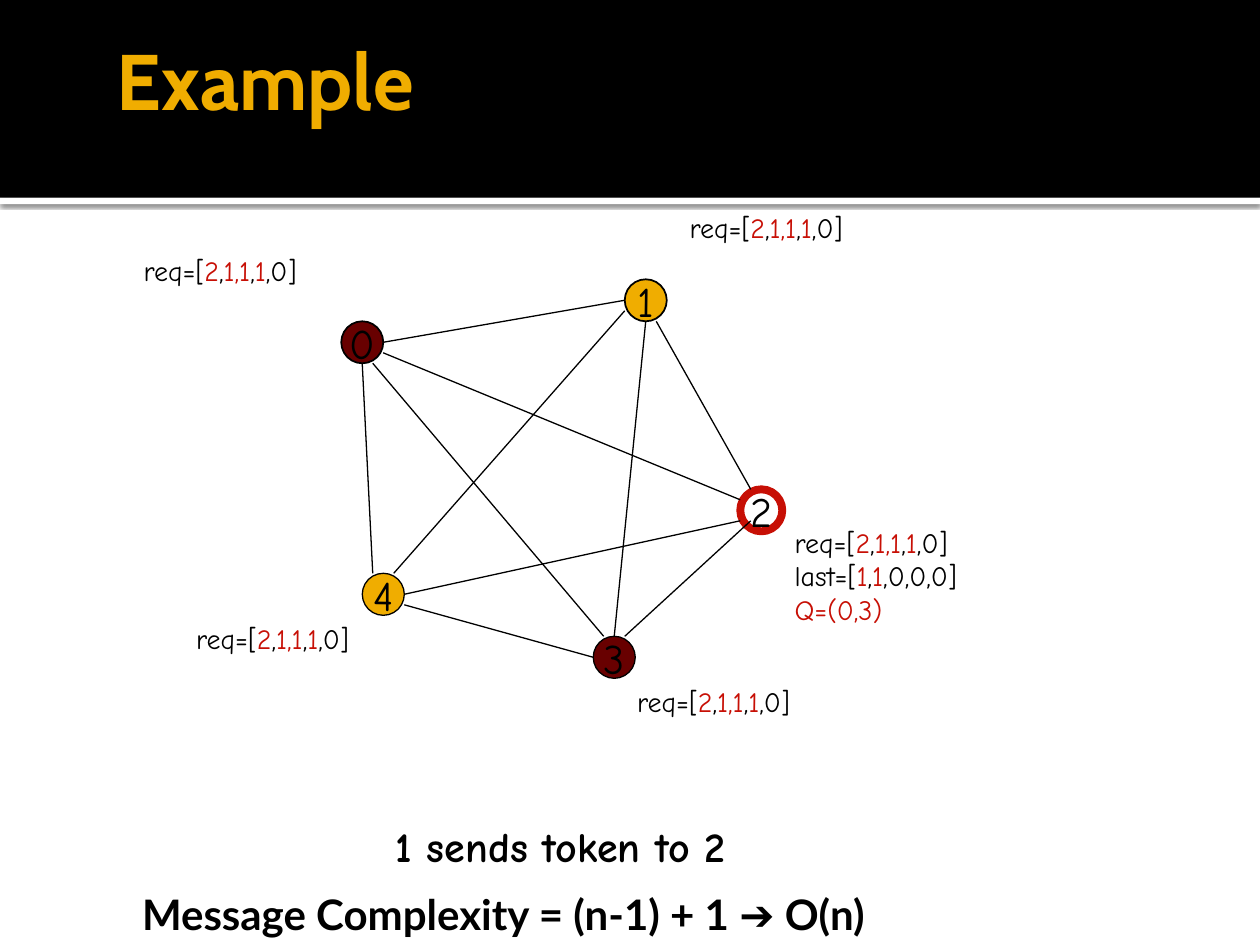
from dataclasses import dataclass
from typing import Optional

from lxml.etree import SubElement
from pptx import Presentation
from pptx.dml.color import RGBColor
from pptx.enum.shapes import MSO_CONNECTOR, MSO_SHAPE
from pptx.enum.text import MSO_ANCHOR, MSO_AUTO_SIZE, PP_ALIGN
from pptx.oxml.ns import qn
from pptx.util import Inches, Pt

BLACK, WHITE, RED, GOLD, MAROON = "000000", "FFFFFF", "C70F05", "F0AD00", "680000"
HAND = "Comic Neue"
CELLS_PER_INCH = 24
GRID_TOP = 0.05
NODE_SIZE = 8  # cells
REQUESTS = "req=[|2|,|1,1|,|1|,0]"  # every second part is red


@dataclass(frozen=True)
class Node:
    name: str
    column: float
    row: float
    fill: Optional[str]
    line: str = BLACK
    weight: float = 0.75


@dataclass(frozen=True)
class Edge:
    """Two nodes, each with a (column, row) port inside its box."""
    start: int
    start_port: tuple[int, int]
    end: int
    end_port: tuple[int, int]


@dataclass(frozen=True)
class Label:
    column: float
    row: float
    lines: tuple[str, ...] = (REQUESTS,)
    width: float = 1.64
    height: float = 0.41


NODES = [
    Node("0", 65, 60, MAROON, weight=1),
    Node("1", 119, 52, GOLD, weight=1),
    Node("2", 141, 92, None, RED, 4.5),
    Node("3", 113, 120, MAROON),
    Node("4", 69, 108, GOLD),
]
EDGES = [
    Edge(0, (8, 4), 1, (0, 4)),
    Edge(1, (6, 8), 2, (2, 0)),
    Edge(2, (2, 6), 3, (6, 0)),
    Edge(3, (0, 4), 4, (8, 6)),
    Edge(4, (2, 0), 0, (4, 8)),
    Edge(0, (8, 6), 2, (0, 2)),
    Edge(0, (6, 8), 3, (2, 0)),
    Edge(1, (4, 8), 3, (4, 0)),
    Edge(1, (0, 6), 4, (6, 0)),
    Edge(2, (0, 6), 4, (8, 4)),
]
LABELS = [
    Label(25, 46),
    Label(129, 37.7),
    Label(149, 97.7, (REQUESTS, "last=[|1|,|1|,0,0,0]", "|Q=(0,3)"), 1.72, 1.34),
    Label(119, 128),
    Label(35, 116),
]


def color(value: str) -> RGBColor:
    return RGBColor.from_string(value)


def grid(column: float, row: float) -> tuple[int, int]:
    return Inches(column / CELLS_PER_INCH), Inches(GRID_TOP + row / CELLS_PER_INCH)


def write(shape, *lines: str, size: float, font: str = HAND, ink: str = BLACK,
          bold: bool = False, wrap: bool = False, grow: bool = False,
          align=PP_ALIGN.LEFT, anchor=MSO_ANCHOR.TOP) -> None:
    """Fill a shape with lines whose parts alternate between ink and red."""
    frame = shape.text_frame
    frame.word_wrap = wrap
    frame.auto_size = MSO_AUTO_SIZE.SHAPE_TO_FIT_TEXT if grow else MSO_AUTO_SIZE.NONE
    frame.vertical_anchor = anchor
    for index, line in enumerate(lines):
        paragraph = frame.add_paragraph() if index else frame.paragraphs[0]
        paragraph.alignment = align
        for position, part in enumerate(line.split("|")):
            if not part:
                continue
            run = paragraph.add_run()
            run.text = part
            run.font.name, run.font.size, run.font.bold = font, Pt(size), bold
            run.font.color.rgb = color(RED if position % 2 else ink)


def draw_band(slide, top: float, height: float, fill: str):
    band = slide.shapes.add_shape(MSO_SHAPE.RECTANGLE, 0, Inches(top), Inches(10), Inches(height))
    band.shadow.inherit = False
    band.fill.solid()
    band.fill.fore_color.rgb = color(fill)
    band.line.fill.background()
    return band


def add_shadow(shape) -> None:
    effects = shape._element.spPr.find(qn("a:effectLst"))
    shadow = SubElement(effects, qn("a:outerShdw"), blurRad=str(Pt(2.5)), dist=str(Pt(0.8)),
                        dir="5400000", algn="tl", rotWithShape="0")
    tint = SubElement(shadow, qn("a:srgbClr"), val=BLACK)
    SubElement(tint, qn("a:alpha"), val="60000")


def draw_node(slide, node: Node) -> None:
    side = Inches(NODE_SIZE / CELLS_PER_INCH)
    circle = slide.shapes.add_shape(MSO_SHAPE.OVAL, *grid(node.column, node.row), side, side)
    circle.shadow.inherit = False
    if node.fill:
        circle.fill.solid()
        circle.fill.fore_color.rgb = color(node.fill)
    else:
        circle.fill.background()
    circle.line.color.rgb = color(node.line)
    circle.line.width = Pt(node.weight)
    write(circle, node.name, size=24, align=PP_ALIGN.CENTER, anchor=MSO_ANCHOR.MIDDLE)


def port_position(index: int, port: tuple[int, int]) -> tuple[int, int]:
    node = NODES[index]
    return grid(node.column + port[0], node.row + port[1])


def draw_edge(slide, edge: Edge) -> None:
    line = slide.shapes.add_connector(MSO_CONNECTOR.STRAIGHT,
                                      *port_position(edge.start, edge.start_port),
                                      *port_position(edge.end, edge.end_port))
    line.line.color.rgb = color(BLACK)
    line.line.width = Pt(0.75)
    SubElement(line._element.spPr, qn("a:effectLst"))


def draw_label(slide, label: Label) -> None:
    box = slide.shapes.add_textbox(*grid(label.column, label.row),
                                   Inches(label.width), Inches(label.height))
    write(box, *label.lines, size=16, grow=True)


def main() -> None:
    deck = Presentation()
    deck.slide_width, deck.slide_height = Inches(10), Inches(7.5)
    slide = deck.slides.add_slide(deck.slide_layouts[6])

    # Header
    add_shadow(draw_band(slide, 1.57, 0.05, WHITE))
    draw_band(slide, 0, 1.57, BLACK)
    title = slide.shapes.add_textbox(Inches(0.83), 0, Inches(8.5), Inches(1.25))
    title.text_frame.margin_right = Inches(0.05)
    write(title, "Example", size=45, font="Cabin", ink=GOLD, bold=True, wrap=True,
          anchor=MSO_ANCHOR.MIDDLE)

    # Network of processes
    for node in NODES:
        draw_node(slide, node)
    for edge in EDGES:
        draw_edge(slide, edge)
    for label in LABELS:
        draw_label(slide, label)

    # Captions
    step = slide.shapes.add_textbox(Inches(3.04), Inches(6.46), Inches(4.17), Inches(0.57))
    write(step, "1 sends token to 2", size=24, bold=True, wrap=True, grow=True)
    complexity = slide.shapes.add_textbox(Inches(1.03), Inches(7), Inches(6.97), Inches(0.5))
    write(complexity, "Message Complexity = (n-1) + 1 ➔ O(n)", size=24, font="Lato",
          bold=True, grow=True)

    deck.save("out.pptx")


if __name__ == "__main__":
    main()
